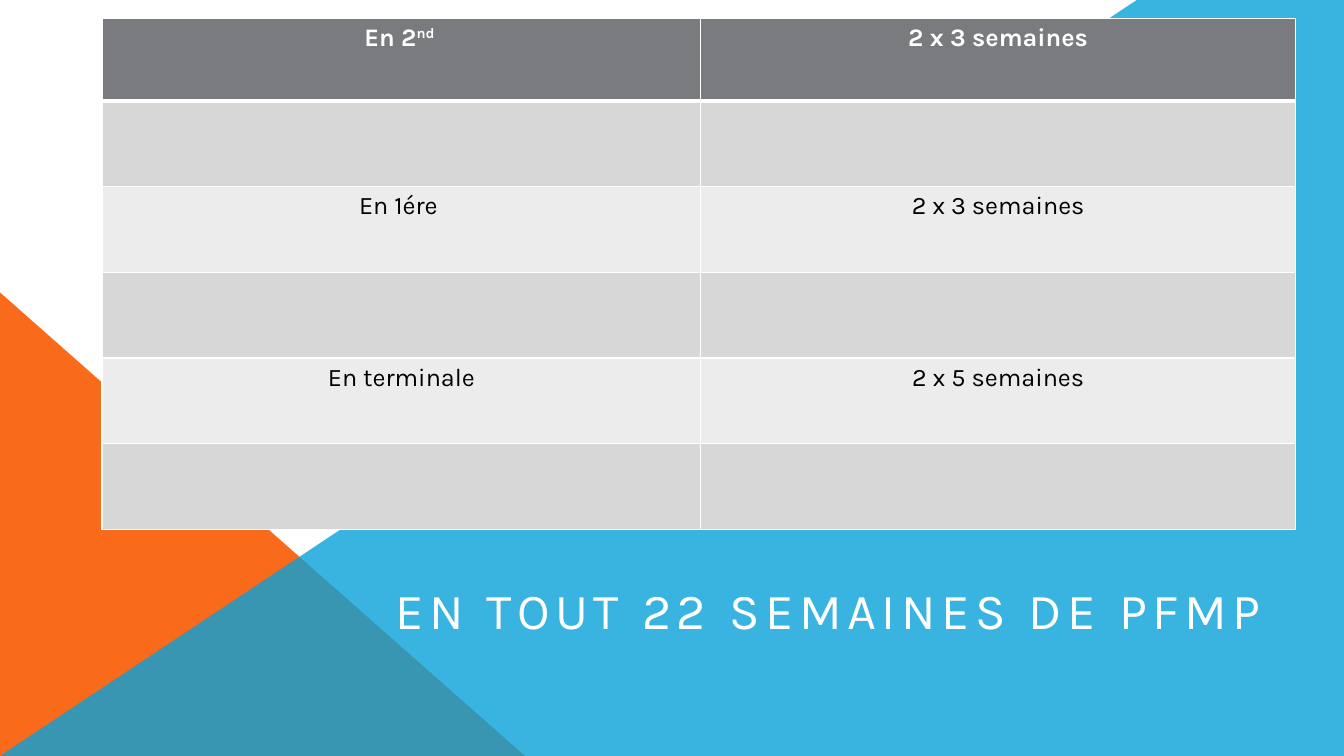
"""Build the slide that sums up the weeks of work placement."""
from lxml.etree import SubElement
from pptx import Presentation
from pptx.dml.color import RGBColor
from pptx.enum.shapes import MSO_SHAPE
from pptx.enum.text import MSO_ANCHOR, MSO_AUTO_SIZE, PP_ALIGN
from pptx.oxml import parse_xml
from pptx.oxml.ns import nsdecls, qn
from pptx.util import Cm, Pt

WHITE = RGBColor(0xFF, 0xFF, 0xFF)
BLACK = RGBColor(0x00, 0x00, 0x00)
ORANGE = RGBColor(0xF9, 0x6A, 0x1B)
BLUE = RGBColor(0x08, 0xA1, 0xD9)
HEADER_GRAY = RGBColor(0x79, 0x7B, 0x7E)
DARK_BAND = RGBColor(0xD7, 0xD7, 0xD8)
LIGHT_BAND = RGBColor(0xEC, 0xEC, 0xEC)

FONT = "Karla"
WIDTH, HEIGHT = Cm(33.87), Cm(19.05)
COLUMN_WIDTHS = (Cm(15.09), Cm(14.99))
HEADER_HEIGHT, ROW_HEIGHT = Cm(2.08), Cm(2.16)
PLACEMENTS = (
    ("En 2", "2 x 3 semaines"),
    ("En 1ére ", "2 x 3 semaines"),
    ("En terminale", "2 x 5 semaines"),
)


def paint(shape, color):
    """Give a shape a flat fill without outline or shadow."""
    shape.fill.solid()
    shape.fill.fore_color.rgb = color
    shape.line.fill.background()
    shape.shadow.inherit = False


def add_backdrop(slide):
    """Draw the orange corner and the translucent blue field."""
    top = Cm(7.37)
    corner = slide.shapes.add_shape(
        MSO_SHAPE.RIGHT_TRIANGLE, 0, top, Cm(13.23), HEIGHT - top)
    paint(corner, ORANGE)

    outline = slide.shapes.build_freeform(0, HEIGHT)
    outline.add_line_segments([(Cm(28.65), 0), (WIDTH, 0), (WIDTH, HEIGHT)])
    field = outline.convert_to_shape()
    paint(field, BLUE)
    color = field.element.spPr.find(qn("a:solidFill"))[0]
    SubElement(color, qn("a:alpha"), val="80000")


def set_borders(cell, top, bottom):
    """Draw white cell borders, with top and bottom widths in points."""
    properties = cell._tc.get_or_add_tcPr()
    sides = (("L", 1), ("R", 1), ("T", top), ("B", bottom))
    for index, (side, width) in enumerate(sides):
        properties.insert(index, parse_xml(
            f'<a:ln{side} {nsdecls("a")} w="{Pt(width)}"><a:solidFill>'
            f'<a:srgbClr val="{WHITE}"/></a:solidFill></a:ln{side}>'))


def write_cell(cell, text, is_header):
    """Write centred text in a table cell."""
    paragraph = cell.text_frame.paragraphs[0]
    paragraph.alignment = PP_ALIGN.CENTER
    paragraph.font.name = FONT
    paragraph.font.size = Pt(18)
    paragraph.font.bold = is_header
    paragraph.font.color.rgb = WHITE if is_header else BLACK
    paragraph.add_run().text = text
    return paragraph


def add_placements(slide):
    """Add the table of placements, with an empty row after each level."""
    row_count = 2 * len(PLACEMENTS)
    table = slide.shapes.add_table(
        row_count, len(COLUMN_WIDTHS), Cm(2.57), Cm(0.46),
        sum(COLUMN_WIDTHS), HEADER_HEIGHT + (row_count - 1) * ROW_HEIGHT).table
    for column, width in zip(table.columns, COLUMN_WIDTHS):
        column.width = width
    for index, row in enumerate(table.rows):
        is_header = index == 0
        row.height = HEADER_HEIGHT if is_header else ROW_HEIGHT
        band = DARK_BAND if index % 2 else LIGHT_BAND
        for cell in row.cells:
            cell.fill.solid()
            cell.fill.fore_color.rgb = HEADER_GRAY if is_header else band
            set_borders(cell, 3 if index == 1 else 1, 3 if is_header else 1)
    for level, texts in enumerate(PLACEMENTS):
        for column, text in enumerate(texts):
            write_cell(table.cell(2 * level, column), text, level == 0)

    ordinal = table.cell(0, 0).text_frame.paragraphs[0].add_run()
    ordinal.text = "nd "
    ordinal._r.get_or_add_rPr().set("baseline", "30000")


def format_title(slide):
    """Place the total of weeks in front of the blue field."""
    title = slide.shapes.title
    title.left, title.top = Cm(8.03), Cm(14.73)
    title.width, title.height = Cm(25.22), Cm(2.46)
    frame = title.text_frame
    frame.word_wrap = True
    frame.auto_size = MSO_AUTO_SIZE.NONE
    frame.vertical_anchor = MSO_ANCHOR.TOP
    frame.margin_left, frame.margin_right = Cm(1.93), Cm(0.25)
    frame.margin_top, frame.margin_bottom = Cm(0.03), Cm(0.13)
    paragraph = frame.paragraphs[0]
    paragraph.alignment = PP_ALIGN.LEFT
    paragraph.space_before = Pt(8)
    paragraph.line_spacing = 0.9
    paragraph.font.name = FONT
    paragraph.font.size = Pt(36)
    paragraph.font.color.rgb = WHITE
    total = paragraph.add_run()
    total.text = "EN TOUT 22 SEMAINES DE PFMP"
    total._r.get_or_add_rPr().set("spc", "400")
    title.element.getparent().append(title.element)


def main():
    """Build and save the slide."""
    deck = Presentation()
    deck.slide_width, deck.slide_height = WIDTH, HEIGHT
    slide = deck.slides.add_slide(deck.slide_layouts.get_by_name("Title Only"))
    add_backdrop(slide)
    add_placements(slide)
    format_title(slide)
    deck.save("out.pptx")


if __name__ == "__main__":
    main()
